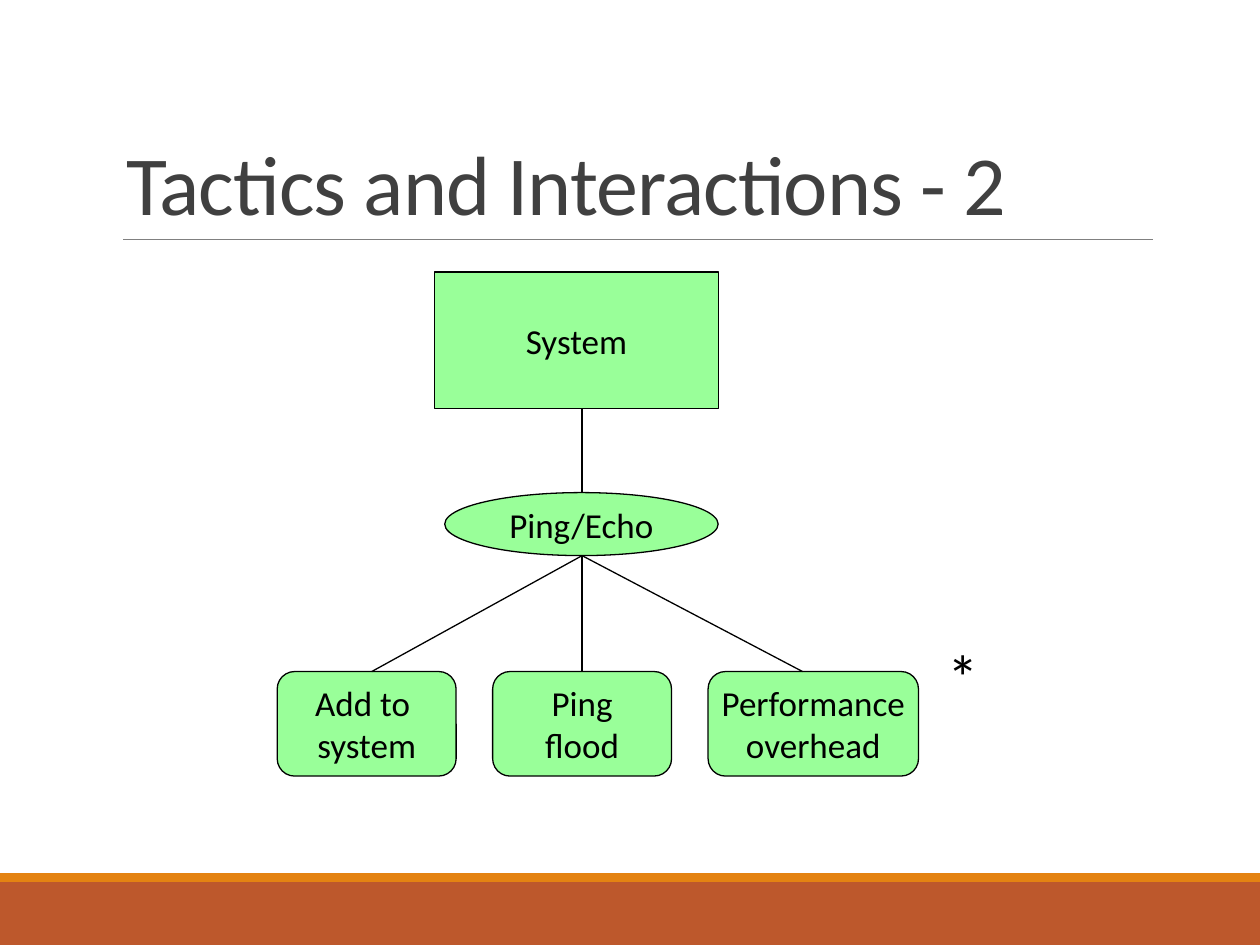
"""Build the slide 'Tactics and Interactions - 2', a tree of a tactic and its side effects."""
from lxml.etree import SubElement
from pptx import Presentation
from pptx.dml.color import RGBColor
from pptx.enum.shapes import MSO_CONNECTOR as CONN, MSO_SHAPE as SHAPE
from pptx.enum.text import MSO_ANCHOR as ANCHOR, PP_ALIGN as ALIGN
from pptx.oxml.ns import qn
from pptx.util import Inches, Pt

COLORS = {"node": "99FF99", "ink": "000000", "title": "404040",
          "rule": "808080", "band": "BD582C", "stripe": "E48312"}
FONT = "Calibri"
W, H = 10, 7.5
TITLE = "Tactics and Interactions - 2"
AXIS = 4.62
SYSTEM = (["System"], SHAPE.RECTANGLE, (3.45, 2.16, 2.25, 1.08))
TACTIC = (["Ping/Echo"], SHAPE.OVAL, (3.53, 3.91, 2.17, 0.5))
EFFECTS = [(["Add to ", "system"], 1.42, 2.95),
           (["Ping", "flood"], 1.42, AXIS),
           (["Performance", "overhead"], 1.67, 6.37)]
EFFECT_LEFT, EFFECT_TOP, EFFECT_PITCH, EFFECT_H = 2.2, 5.33, 1.71, 0.83
BARS = [("band", 7, 0.5), ("stripe", 6.93, 0.07)]


def rgb(name):
    return RGBColor.from_string(COLORS[name])


def add_run(p, text, size, color="ink"):
    r = p.add_run()
    r.text = text
    r.font.name, r.font.size = FONT, Pt(size)
    r.font.color.rgb = rgb(color)
    return r


def add_box(s, kind, box, fill):
    sp = s.shapes.add_shape(kind, *map(Inches, box))
    sp.shadow.inherit = False
    sp.fill.solid()
    sp.fill.fore_color.rgb = rgb(fill)
    sp.line.fill.background()
    return sp


def add_node(s, lines, kind, box):
    sp = add_box(s, kind, box, "node")
    sp.line.color.rgb, sp.line.width = rgb("ink"), Pt(0.75)
    tf = sp.text_frame
    tf.word_wrap, tf.vertical_anchor = False, ANCHOR.MIDDLE
    for i, line in enumerate(lines):
        p = tf.add_paragraph() if i else tf.paragraphs[0]
        p.alignment = ALIGN.CENTER
        add_run(p, line, 20)


def add_line(s, x1, y1, x2, y2, color="ink", width=0.75):
    cx = s.shapes.add_connector(CONN.STRAIGHT, *map(Inches, (x1, y1, x2, y2)))
    cx.line.color.rgb, cx.line.width = rgb(color), Pt(width)
    SubElement(cx._element.spPr, qn("a:effectLst"))


def add_title(s):
    sp = s.shapes.title
    sp.left, sp.top, sp.width, sp.height = map(Inches, (0.9, 0.31, 8.25, 1.59))
    tf = sp.text_frame
    tf.vertical_anchor = ANCHOR.BOTTOM
    p = tf.paragraphs[0]
    p.alignment, p.line_spacing = ALIGN.LEFT, 0.85
    r = add_run(p, TITLE, 48, "title")
    r.font._element.set("spc", "-50")


def add_tree(s):
    tactic_top = TACTIC[2][1]
    tactic_bottom = tactic_top + TACTIC[2][3]
    add_node(s, *SYSTEM)
    add_line(s, AXIS, SYSTEM[2][1] + SYSTEM[2][3], AXIS, tactic_top)
    add_node(s, *TACTIC)
    for i, (lines, width, end) in enumerate(EFFECTS):
        left = EFFECT_LEFT + i * EFFECT_PITCH
        add_node(s, lines, SHAPE.ROUNDED_RECTANGLE, (left, EFFECT_TOP, width, EFFECT_H))
        add_line(s, AXIS, tactic_bottom, end, EFFECT_TOP)


def main():
    prs = Presentation()
    prs.slide_width, prs.slide_height = Inches(W), Inches(H)
    s = prs.slides.add_slide(prs.slide_layouts[5])
    for color, top, height in BARS:
        add_box(s, SHAPE.RECTANGLE, (0, top, W, height), color)
    add_line(s, 0.98, 1.9, 9.15, 1.9, "rule", 0.5)
    add_title(s)
    add_tree(s)
    star = s.shapes.add_textbox(*map(Inches, (7.42, 5.01, 0.4, 0.71)))
    star.text_frame.word_wrap = False
    add_run(star.text_frame.paragraphs[0], "*", 36)
    prs.save("out.pptx")


if __name__ == "__main__":
    main()
